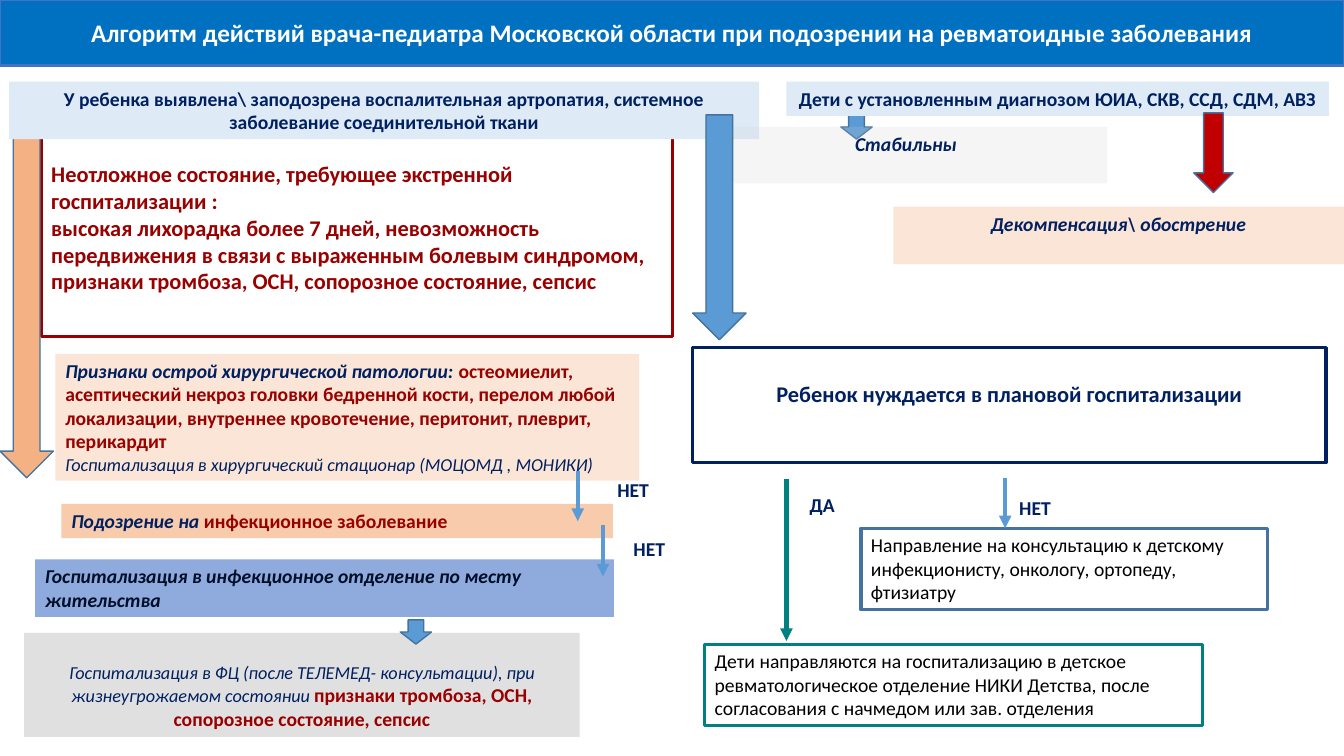
import dataclasses

import pptx
import pptx.dml.color
import pptx.enum.shapes
import pptx.enum.text
import pptx.oxml
import pptx.oxml.ns
import pptx.util

Inches = pptx.util.Inches
ALIGN = pptx.enum.text.PP_ALIGN
ANCHOR = pptx.enum.text.MSO_ANCHOR
SHAPE = pptx.enum.shapes.MSO_SHAPE


@dataclasses.dataclass(frozen=True)
class Theme:
    """Fonts, colours and type sizes of the slide."""

    font: str = "Calibri"
    title_size: int = 18
    lead_size: int = 16
    body_size: int = 14
    note_size: int = 13
    white: str = "FFFFFF"
    black: str = "000000"
    navy: str = "002060"
    midnight: str = "000E2A"
    crimson: str = "990000"
    red: str = "C00000"
    banner: str = "0070C0"
    banner_edge: str = "4472C4"
    blue: str = "5B9BD5"
    steel: str = "43739E"
    pale_blue: str = "DEEBF7"
    periwinkle: str = "8FAADC"
    orange: str = "F4B183"
    apricot: str = "F8CBAD"
    peach: str = "FBE5D6"
    grey: str = "D0CECE"
    teal: str = "008080"


@dataclasses.dataclass(frozen=True)
class Span:
    """A stretch of text in one style."""

    text: str
    color: str
    size: int = Theme.body_size
    bold: bool = True
    italic: bool = False


class Flowchart:
    """Draws the parts of the flowchart on one slide."""

    def __init__(self, slide, theme):
        self.slide = slide
        self.theme = theme

    def rgb(self, color):
        return pptx.dml.color.RGBColor.from_string(color)

    def paint(self, shape, fill, edge, width, opacity=100):
        shape.shadow.inherit = False
        if fill:
            shape.fill.solid()
            shape.fill.fore_color.rgb = self.rgb(fill)
            if opacity < 100:
                color = shape.element.spPr.find(".//" + pptx.oxml.ns.qn("a:srgbClr"))
                alpha = pptx.oxml.parse_xml(
                    f'<a:alpha {pptx.oxml.ns.nsdecls("a")} val="{opacity * 1000}"/>')
                color.append(alpha)
        else:
            shape.fill.background()
        if edge:
            shape.line.color.rgb = self.rgb(edge)
            shape.line.width = pptx.util.Pt(width)
        else:
            shape.line.fill.background()

    def fill_text(self, shape, paragraphs, align, anchor, wrap=True):
        frame = shape.text_frame
        frame.word_wrap = wrap
        frame.vertical_anchor = anchor
        for index, spans in enumerate(paragraphs):
            paragraph = frame.add_paragraph() if index else frame.paragraphs[0]
            paragraph.alignment = align
            for span in spans:
                run = paragraph.add_run()
                run.text = span.text
                run.font.name = self.theme.font
                run.font.size = pptx.util.Pt(span.size)
                run.font.bold = span.bold
                run.font.italic = span.italic
                run.font.color.rgb = self.rgb(span.color)

    def box(self, place, paragraphs, fill=None, edge=None, width=2.5, opacity=100,
            align=ALIGN.LEFT, anchor=ANCHOR.TOP, wrap=True, top=0.05, bottom=0.05):
        shape = self.slide.shapes.add_shape(SHAPE.RECTANGLE, *map(Inches, place))
        self.paint(shape, fill, edge, width, opacity)
        self.fill_text(shape, paragraphs, align, anchor, wrap)
        shape.text_frame.margin_top = Inches(top)
        shape.text_frame.margin_bottom = Inches(bottom)

    def block_arrow(self, place, fill):
        shape = self.slide.shapes.add_shape(SHAPE.DOWN_ARROW, *map(Inches, place))
        self.paint(shape, fill, self.theme.steel, 1)

    def label(self, place, text):
        shape = self.slide.shapes.add_textbox(*map(Inches, place))
        self.fill_text(shape, [[Span(text, self.theme.navy)]], ALIGN.CENTER, ANCHOR.TOP)

    def arrow(self, x, start, end, color):
        connector = self.slide.shapes.add_connector(
            pptx.enum.shapes.MSO_CONNECTOR.STRAIGHT,
            Inches(x), Inches(start), Inches(x), Inches(end))
        connector.line.color.rgb = self.rgb(color)
        connector.line.width = pptx.util.Pt(3)
        namespace = pptx.oxml.ns.nsdecls("a")
        properties = connector.element.spPr
        properties.find(pptx.oxml.ns.qn("a:ln")).append(
            pptx.oxml.parse_xml(f'<a:tailEnd {namespace} type="triangle"/>'))
        properties.append(pptx.oxml.parse_xml(f"<a:effectLst {namespace}/>"))


def main():
    deck = pptx.Presentation()
    deck.slide_width, deck.slide_height = Inches(13.33), Inches(7.5)
    t = Theme()
    chart = Flowchart(deck.slides.add_slide(deck.slide_layouts[6]), t)
    center, middle = ALIGN.CENTER, ANCHOR.MIDDLE

    chart.box((0, 0, 13.33, 0.65), [[Span(
        "Алгоритм действий врача-педиатра Московской области при подозрении на "
        "ревматоидные заболевания", t.white, t.title_size)]],
        t.banner, t.banner_edge, 1.5, align=center, anchor=middle, wrap=False)

    emergency = (
        "Неотложное состояние, требующее экстренной",
        "госпитализации :",
        "высокая лихорадка более 7 дней, невозможность передвижения в связи с "
        "выраженным болевым синдромом, признаки тромбоза, ОСН, сопорозное состояние, сепсис")
    chart.box((0.41, 1.17, 6.26, 2.17),
              [[Span(text, t.crimson, t.lead_size)] for text in emergency],
              edge=t.crimson, anchor=middle)
    chart.block_arrow((0, 1.15, 0.53, 3.59), t.orange)
    chart.box((0.55, 3.51, 5.79, 1.26), [
        [Span("Признаки острой хирургической патологии:", t.navy, italic=True),
         Span(" остеомиелит, асептический некроз головки бедренной кости, перелом любой "
              "локализации, внутреннее кровотечение, перитонит, плеврит, перикардит",
              t.crimson)],
        [Span("Госпитализация в хирургический стационар (МОЦОМД , МОНИКИ)",
              t.navy, t.note_size, bold=False, italic=True)]], t.peach)
    chart.box((0.09, 0.81, 7.44, 0.57), [[Span(
        "У ребенка выявлена\\ заподозрена воспалительная артропатия, системное "
        "заболевание соединительной ткани", t.navy)]], t.pale_blue, align=center)
    chart.box((0.61, 5, 5.47, 0.34), [
        [Span("Подозрение на ", t.navy, italic=True),
         Span("инфекционное заболевание", t.crimson)]], t.apricot)
    chart.box((0.35, 5.55, 5.74, 0.57), [[Span(
        "Госпитализация в инфекционное отделение по месту жительства",
        t.midnight, italic=True)]], t.periwinkle)

    chart.block_arrow((8.34, 1.14, 0.31, 0.24), t.blue)
    chart.box((7.8, 0.81, 5.38, 0.34), [[Span(
        "Дети с установленным диагнозом ЮИА, СКВ, ССД, СДМ, АВЗ", t.navy)]],
        t.pale_blue, align=center)
    chart.box((6.99, 1.26, 3.99, 0.56), [[Span("Стабильны", t.navy, italic=True)]],
              t.grey, opacity=19, align=center)
    chart.box((8.86, 2.05, 4.47, 0.57),
              [[Span("Декомпенсация\\ обострение", t.navy, italic=True)]],
              t.peach, align=center)
    chart.block_arrow((11.84, 1.12, 0.39, 0.79), t.red)

    chart.box((0.24, 6.28, 5.51, 1.03), [
        [Span("Госпитализация в ФЦ (после ТЕЛЕМЕД- консультации), при "
              "жизнеугрожаемом состоянии ", t.navy, t.note_size, bold=False, italic=True),
         Span("признаки тромбоза, ОСН, сопорозное состояние, сепсис", t.crimson)]],
        t.grey, opacity=63, align=center, top=0.28)
    chart.block_arrow((3.97, 6.15, 0.31, 0.24), t.blue)

    chart.box((6.87, 3.45, 6.28, 1.14), [[Span(
        "Ребенок нуждается в плановой госпитализации", t.navy, t.lead_size)]],
        edge=t.navy, align=center, anchor=middle, bottom=0.28)
    chart.box((8.54, 5.24, 4.03, 0.81), [[Span(
        "Направление на консультацию к детскому инфекционисту, онкологу, ортопеду, "
        "фтизиатру", t.black, bold=False)]], edge=t.steel, width=2.25)
    chart.box((6.99, 6.39, 4.94, 0.81), [[Span(
        "Дети направляются на госпитализацию в детское ревматологическое отделение "
        "НИКИ Детства, после согласования с начмедом или зав. отделения",
        t.black, bold=False)]], edge=t.teal, width=2.25)
    chart.block_arrow((6.87, 1.14, 0.53, 2.23), t.blue)

    for x, start, end, color in ((9.97, 4.74, 5.24, t.blue), (7.8, 4.75, 6.36, t.teal),
                                 (5.73, 4.67, 5.17, t.blue), (5.98, 5.21, 5.72, t.blue)):
        chart.arrow(x, start, end, color)
    for left, top, width, answer in ((9.91, 4.87, 0.71, "НЕТ"), (7.8, 4.84, 0.71, "ДА"),
                                     (5.9, 4.69, 0.76, "НЕТ"), (6.06, 5.28, 0.76, "НЕТ")):
        chart.label((left, top, width, 0.34), answer)

    deck.save("out.pptx")


if __name__ == "__main__":
    main()
